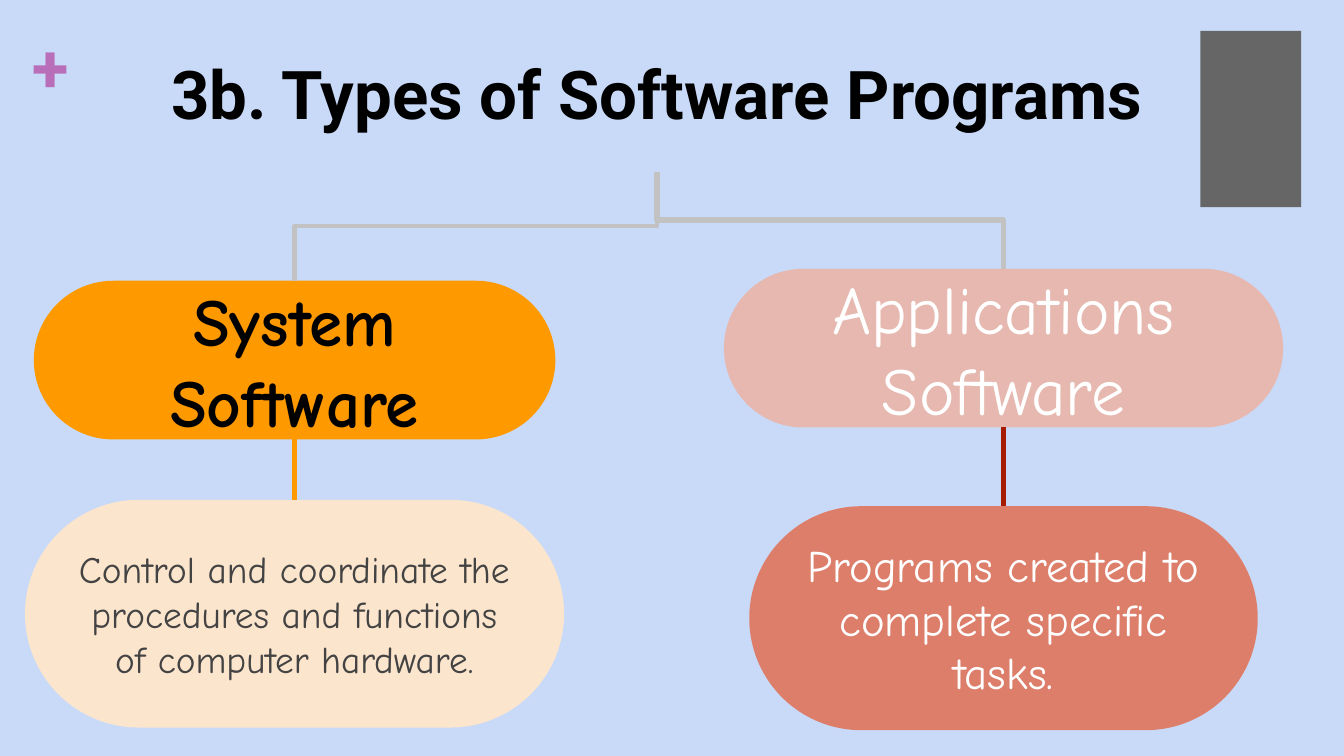
from dataclasses import dataclass
from typing import Optional

import pptx
import pptx.dml.color
import pptx.enum.shapes
import pptx.enum.text
import pptx.oxml
import pptx.util

Pt = pptx.util.Pt
Shape = pptx.enum.shapes.MSO_SHAPE
Link = pptx.enum.shapes.MSO_CONNECTOR
Align = pptx.enum.text.PP_ALIGN
Anchor = pptx.enum.text.MSO_ANCHOR

HAND = "Comic Neue"
MID = 352
LEFT = 157.8
RIGHT = 537.6
FORK = 92  # where the branches leave the title


@dataclass
class Pill:
    mid: float
    top: float
    width: float
    height: float
    text: str
    size: float
    ink: str
    fill: Optional[str] = None
    font: str = HAND
    bold: bool = False

    @property
    def base(self) -> float:
        return self.top + self.height


def color(code: str) -> pptx.dml.color.RGBColor:
    return pptx.dml.color.RGBColor.from_string(code)


def write(frame, text: str, *, size: float, ink: str, font: str, bold: bool = False,
          align=Align.LEFT, anchor=Anchor.TOP, inset: float = 0, wrap: bool = True) -> None:
    frame.word_wrap = wrap
    frame.vertical_anchor = anchor
    frame.margin_left = frame.margin_right = Pt(inset)
    frame.margin_top = frame.margin_bottom = Pt(inset)
    par = frame.paragraphs[0]
    par.alignment = align
    run = par.add_run()
    run.text = text
    run.font.size, run.font.name, run.font.bold = Pt(size), font, bold
    run.font.color.rgb = color(ink)


def block(slide, kind, left: float, top: float, width: float, height: float,
          fill: Optional[str]):
    shape = slide.shapes.add_shape(kind, Pt(left), Pt(top), Pt(width), Pt(height))
    shape.shadow.inherit = False
    shape.line.fill.background()
    if fill:
        shape.fill.solid()
        shape.fill.fore_color.rgb = color(fill)
    else:
        shape.fill.background()
    return shape


def draw(slide, pill: Pill) -> None:
    shape = block(slide, Shape.ROUNDED_RECTANGLE, pill.mid - pill.width / 2, pill.top,
                  pill.width, pill.height, pill.fill)
    shape.adjustments[0] = 0.5
    write(shape.text_frame, pill.text, size=pill.size, ink=pill.ink, font=pill.font,
          bold=pill.bold, align=Align.CENTER, anchor=Anchor.MIDDLE, inset=7.2)


def join(slide, kind, x1: float, y1: float, x2: float, y2: float, ink: str, width: float):
    line = slide.shapes.add_connector(kind, Pt(x1), Pt(y1), Pt(x2), Pt(y2))
    line.line.color.rgb = color(ink)
    line.line.width = Pt(width)
    props = line._element.spPr
    props.append(pptx.oxml.parse_xml(
        '<a:effectLst xmlns:a="http://schemas.openxmlformats.org/drawingml/2006/main"/>'))
    return line


def branch(slide, x1: float, y1: float, x2: float, y2: float, ink: str, width: float) -> None:
    # An elbow runs sideways first; a quarter turn makes it run down first.
    cx, cy = (x1 + x2) / 2, (y1 + y2) / 2
    dx, dy = (x2 - x1) / 2, (y2 - y1) / 2
    line = join(slide, Link.ELBOW, cx + dy, cy - dx, cx - dy, cy + dx, ink, width)
    line._element.spPr.xfrm.set("rot", str(270 * 60000))


def main() -> None:
    deck = pptx.Presentation()
    deck.slide_width, deck.slide_height = Pt(720), Pt(405)
    slide = deck.slides.add_slide(deck.slide_layouts[6])
    slide.background.fill.solid()
    slide.background.fill.fore_color.rgb = color("C9DAF8")

    # Corner marks
    block(slide, Shape.RECTANGLE, 643, 16.6, 54, 94.4, "666666")
    plus = slide.shapes.add_textbox(Pt(17.3), Pt(13.7), Pt(20.9), Pt(32.4))
    write(plus.text_frame, "+", size=36, ink="B86EB8", font="Roboto Slab", bold=True, wrap=False)

    # Title, two kinds and their notes
    title = Pill(MID, 7.2, 677.6, 85, "3b. Types of Software Programs", 36, "000000",
                 font="Roboto", bold=True)
    apps = Pill(RIGHT, 144, 299.6, 85, "Applications Software", 36, "FFFFFF", "E6B8AF")
    system = Pill(LEFT, 150.4, 279.4, 85, "System Software", 36, "000000", "FF9900", bold=True)
    control = Pill(LEFT, 267.8, 288.8, 122,
                   "Control and coordinate the procedures and functions of computer hardware.",
                   20, "434343", "FCE5CD")
    tasks = Pill(RIGHT, 271.2, 272.4, 120, "Programs created to complete specific tasks.",
                 24, "FFFFFF", "DD7E6B")
    for pill in (title, apps, system, control, tasks):
        draw(slide, pill)

    # Branches from the title, then links down to the notes
    for kind, width in ((apps, 3), (system, 2.25)):
        branch(slide, MID, FORK, kind.mid, kind.top, "C2C2C2", width)
    for kind, note, ink, width in ((system, control, "FF9900", 2.25),
                                   (apps, tasks, "A61C00", 3)):
        join(slide, Link.STRAIGHT, kind.mid, kind.base, note.mid, note.top, ink, width)

    deck.save("out.pptx")


if __name__ == "__main__":
    main()
